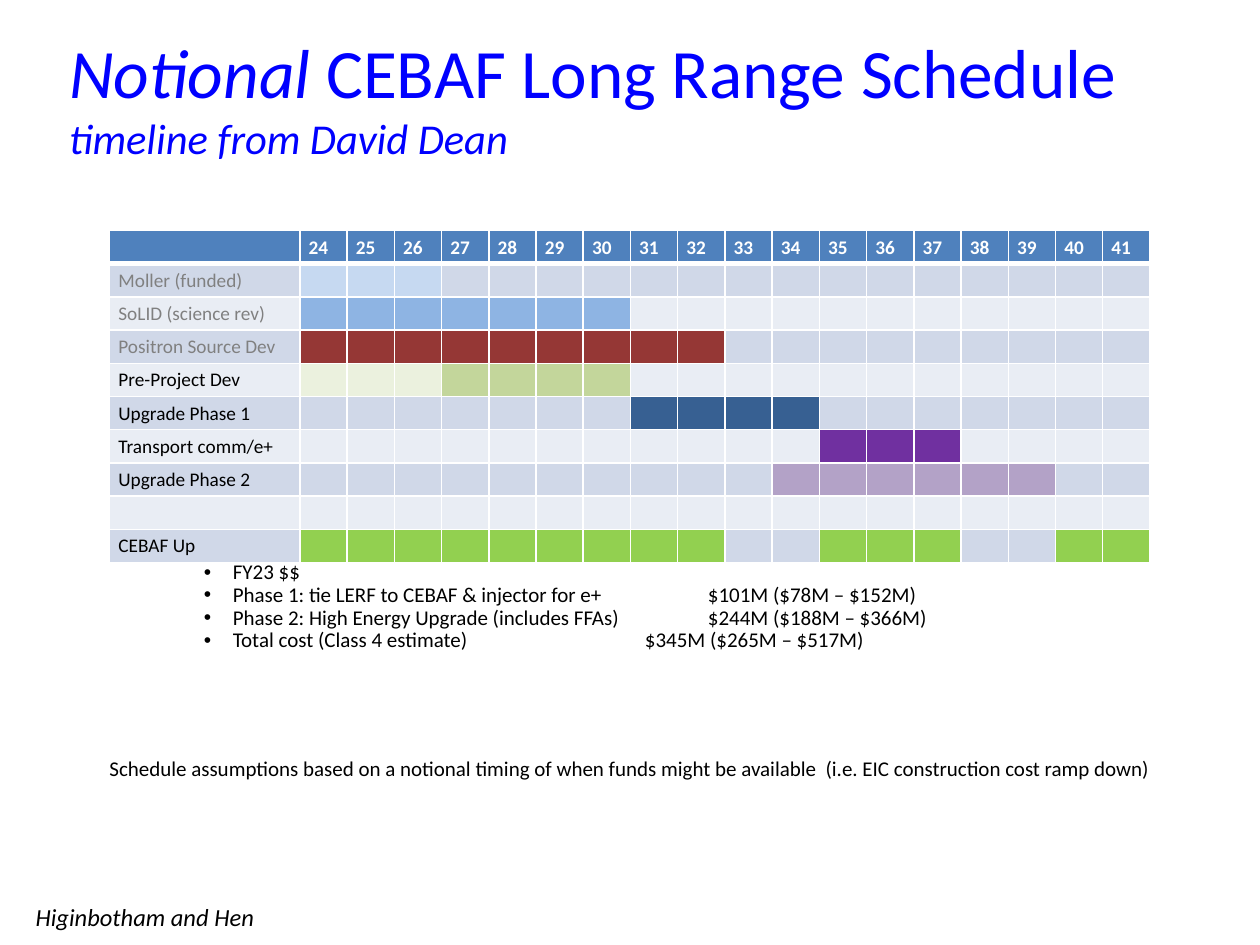
from lxml import etree
from pptx import Presentation
from pptx.dml.color import RGBColor
from pptx.enum.text import MSO_ANCHOR, PP_ALIGN
from pptx.oxml.ns import qn
from pptx.util import Inches, Pt

FONT = "Calibri"
BLACK = RGBColor(0x00, 0x00, 0x00)
WHITE = RGBColor(0xFF, 0xFF, 0xFF)
GRAY = RGBColor(0x80, 0x80, 0x80)
BLUE = RGBColor(0x00, 0x00, 0xFF)
HEADER = RGBColor(0x4F, 0x81, 0xBD)
BANDS = (RGBColor(0xD0, 0xD8, 0xE8), RGBColor(0xE9, 0xED, 0xF4))
PALE_BLUE = RGBColor(0xC6, 0xD9, 0xF1)
SKY = RGBColor(0x8E, 0xB4, 0xE3)
RED = RGBColor(0x95, 0x37, 0x35)
PALE_OLIVE = RGBColor(0xEB, 0xF1, 0xDE)
OLIVE = RGBColor(0xC3, 0xD6, 0x9B)
NAVY = RGBColor(0x37, 0x60, 0x92)
PURPLE = RGBColor(0x70, 0x30, 0xA0)
LILAC = RGBColor(0xB3, 0xA2, 0xC7)
GREEN = RGBColor(0x92, 0xD0, 0x50)

FIRST_YEAR, LAST_YEAR = 24, 41
# label, label colour, bars as (first year, last year, colour)
ACTIVITIES = [
    ("Moller (funded)", GRAY, [(24, 26, PALE_BLUE)]),
    ("SoLID (science rev)", GRAY, [(24, 30, SKY)]),
    ("Positron Source Dev", GRAY, [(24, 32, RED)]),
    ("Pre-Project Dev", BLACK, [(24, 26, PALE_OLIVE), (27, 30, OLIVE)]),
    ("Upgrade Phase 1", BLACK, [(31, 34, NAVY)]),
    ("Transport comm/e+", BLACK, [(35, 37, PURPLE)]),
    ("Upgrade Phase 2", BLACK, [(34, 39, LILAC)]),
    ("", BLACK, []),
    ("CEBAF Up", BLACK, [(24, 32, GREEN), (35, 37, GREEN), (40, 41, GREEN)]),
]
# text, cost, tab position of the cost
COSTS = [
    ("FY23 $$", "", None),
    ("Phase 1: tie LERF to CEBAF & injector for e+", "$101M ($78M – $152M)", 4),
    ("Phase 2: High Energy Upgrade (includes FFAs)", "$244M ($188M – $366M)", 4),
    ("Total cost (Class 4 estimate)", "$345M ($265M – $517M)", 3.5),
]
ASSUMPTION = ("Schedule assumptions based on a notional timing of when funds might be "
              "available  (i.e. EIC construction cost ramp down)")
AUTHORS = "Higinbotham and Hen"


def add_span(para, text, size, color=BLACK, bold=False, italic=False):
    span = para.add_run()
    span.text = text
    font = span.font
    font.name, font.size, font.bold, font.italic = FONT, Pt(size), bold, italic
    font.color.rgb = color


def add_box(slide, left, top, width, height, wrap=True):
    frame = slide.shapes.add_textbox(
        Inches(left), Inches(top), Inches(width), Inches(height)).text_frame
    frame.word_wrap = wrap
    return frame


def add_title(slide):
    frame = add_box(slide, 0.45, 0.35, 9, 0.83)
    frame.vertical_anchor = MSO_ANCHOR.MIDDLE
    para = frame.paragraphs[0]
    add_span(para, "Notional", 39.6, BLUE, italic=True)
    add_span(para, " CEBAF Long Range Schedule", 39.6, BLUE)
    para.add_line_break()
    add_span(para, "timeline from David Dean", 24.3, BLUE, italic=True)


def set_borders(cell, **widths):
    """Draw white borders; widths in points by side: L, R, T, B."""
    properties = cell._tc.get_or_add_tcPr()
    for side, width in widths.items():
        line = etree.SubElement(properties, qn(f"a:ln{side}"), w=str(Pt(width)))
        fill = etree.SubElement(line, qn("a:solidFill"))
        etree.SubElement(fill, qn("a:srgbClr"), val=str(WHITE))


def fill_cell(cell, row, fill, text="", color=BLACK):
    cell.margin_left = cell.margin_right = Inches(0.07)
    cell.margin_top = cell.margin_bottom = Inches(0.04)
    set_borders(cell, L=1, R=1, T=3 if row == 1 else 1, B=3 if row == 0 else 1)
    cell.fill.solid()
    cell.fill.fore_color.rgb = fill
    para = cell.text_frame.paragraphs[0]
    if text:
        add_span(para, text, 11, color, bold=row == 0)
    else:
        etree.SubElement(para._p, qn("a:endParaRPr"), sz="1100")


def add_schedule(slide):
    years = range(FIRST_YEAR, LAST_YEAR + 1)
    table = slide.shapes.add_table(
        len(ACTIVITIES) + 1, len(years) + 1,
        Inches(0.87), Inches(1.83), Inches(8.26), Inches(2.58)).table
    for row in table.rows:
        row.height = Inches(0.25)
    for column in table.columns:
        column.width = Inches(6.75 / len(years))
    table.columns[0].width = Inches(1.51)

    fill_cell(table.cell(0, 0), 0, HEADER)
    for column, year in enumerate(years, 1):
        fill_cell(table.cell(0, column), 0, HEADER, str(year), WHITE)
    for row, (label, color, bars) in enumerate(ACTIVITIES, 1):
        band = BANDS[(row - 1) % 2]
        fill_cell(table.cell(row, 0), row, band, label, color)
        for column, year in enumerate(years, 1):
            fill = next((shade for start, end, shade in bars if start <= year <= end), band)
            fill_cell(table.cell(row, column), row, fill)


def add_costs(slide):
    frame = add_box(slide, 1.52, 4.41, 6.26, 0.83)
    for index, (text, cost, tab) in enumerate(COSTS):
        para = frame.add_paragraph() if index else frame.paragraphs[0]
        para.line_spacing = 0.9
        properties = para._p.get_or_add_pPr()
        properties.set("marL", str(Inches(0.23)))
        properties.set("indent", str(-Inches(0.23)))
        etree.SubElement(properties, qn("a:buFont"), typeface="Arial")
        etree.SubElement(properties, qn("a:buChar"), char="•")
        if cost:
            stops = etree.SubElement(properties, qn("a:tabLst"))
            etree.SubElement(stops, qn("a:tab"), pos=str(Inches(tab)), algn="l")
            text += "\t" + cost
        add_span(para, text, 12)


def add_notes(slide):
    para = add_box(slide, 0, 5.91, 10, 1.09).paragraphs[0]
    para.alignment = PP_ALIGN.CENTER
    para.line_spacing = 1.2
    add_span(para, ASSUMPTION, 12)
    para = add_box(slide, 0.17, 7.11, 1.96, 0.34, wrap=False).paragraphs[0]
    para.alignment = PP_ALIGN.CENTER
    add_span(para, AUTHORS, 14, italic=True)


def main():
    deck = Presentation()
    deck.slide_width, deck.slide_height = Inches(10), Inches(7.5)
    slide = deck.slides.add_slide(deck.slide_layouts[6])
    add_title(slide)
    add_schedule(slide)
    add_costs(slide)
    add_notes(slide)
    deck.save("out.pptx")


if __name__ == "__main__":
    main()
